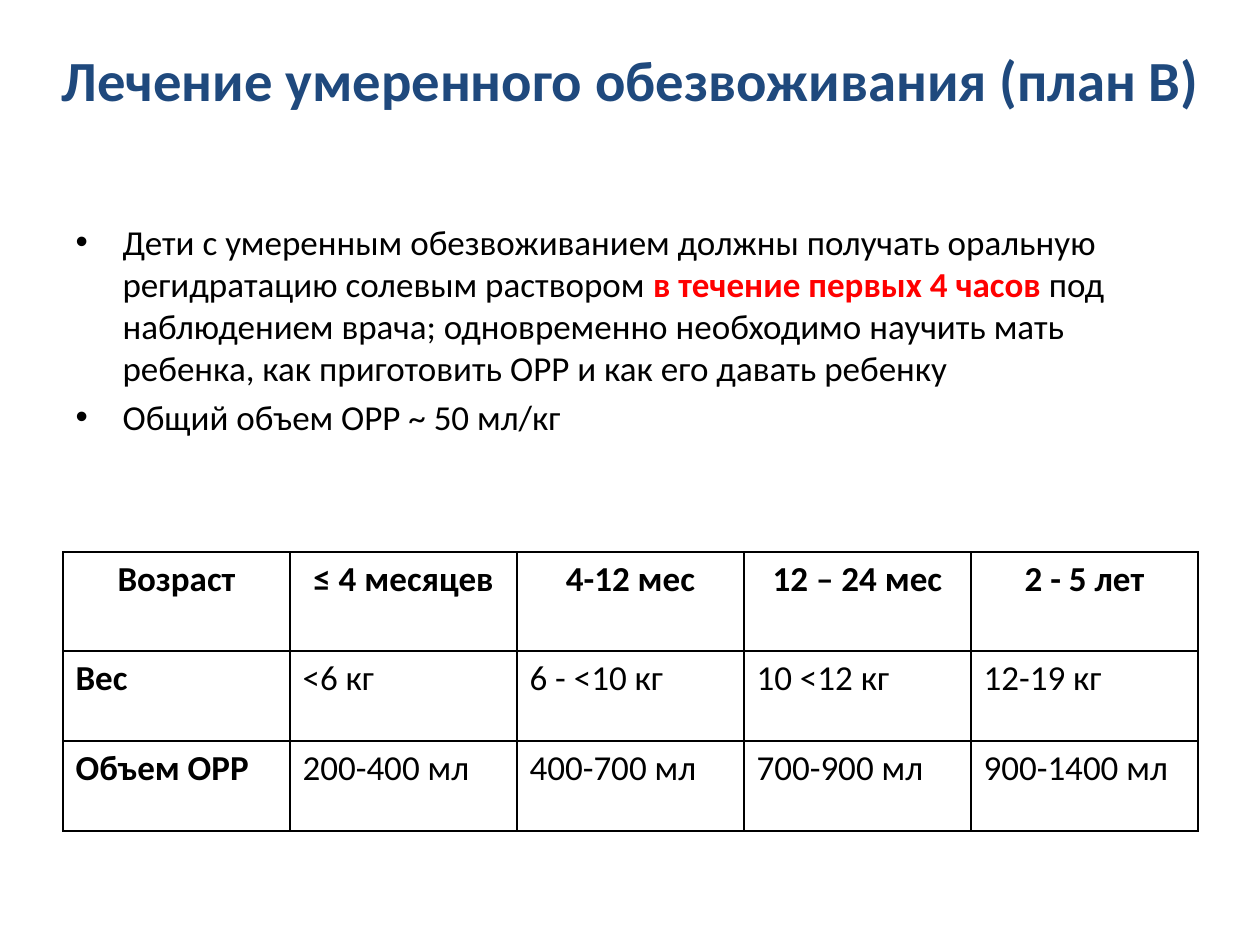
"""Build the slide on treating moderate dehydration (plan B)."""
from pptx import Presentation
from pptx.dml.color import RGBColor
from pptx.enum.text import MSO_ANCHOR as Anchor, MSO_AUTO_SIZE as AutoSize, PP_ALIGN as Align
from pptx.oxml import parse_xml
from pptx.oxml.ns import nsdecls
from pptx.util import Emu, Pt

PX_PER_INCH = 126
FONT = "Calibri"
BLACK = RGBColor(0x00, 0x00, 0x00)
NAVY = RGBColor(0x1F, 0x49, 0x7D)
RED = RGBColor(0xFF, 0x00, 0x00)

TITLE = "Лечение умеренного обезвоживания (план В)"
ADVICE = [
    [
        ("Дети с умеренным обезвоживанием должны получать оральную "
         "регидратацию солевым раствором ", False),
        ("в течение первых 4 часов", True),
        (" под наблюдением врача; одновременно необходимо научить мать "
         "ребенка, как приготовить ОРР и как его давать ребенку", False),
    ],
    [("Общий объем ОРР ~ 50 мл/кг", False)],
]
DOSES = [
    ["Возраст", "≤ 4 месяцев", "4-12 мес", "12 – 24 мес", "2 - 5 лет"],
    ["Вес", "<6 кг", "6 - <10 кг", "10 <12 кг", "12-19 кг"],
    ["Объем ОРР", "200-400 мл", "400-700 мл", "700-900 мл", "900-1400 мл"],
]
ROW_HEIGHTS = [99, 90, 90]
COLUMN_WIDTH = 227


def px(length):
    """Turn pixels into EMU."""
    return Emu(round(length * 914400 / PX_PER_INCH))


def place(shape, left, top, width, height):
    """Move and size a shape, in pixels."""
    shape.left, shape.top = px(left), px(top)
    shape.width, shape.height = px(width), px(height)


def style(run, size=20, color=BLACK, bold=False):
    """Format one run of text."""
    run.font.name = FONT
    run.font.size = Pt(size)
    run.font.bold = bold
    run.font.color.rgb = color


def hang(paragraph):
    """Give a paragraph a hanging indent."""
    properties = paragraph._p.get_or_add_pPr()
    properties.set("marL", str(px(47)))
    properties.set("indent", str(-px(47)))


def add_title(slide):
    """Fill the title placeholder."""
    title = slide.shapes.title
    place(title, 35, 0, 1191, 157)
    frame = title.text_frame
    frame.text = TITLE
    frame.auto_size = AutoSize.NONE
    frame.vertical_anchor = Anchor.MIDDLE
    heading = frame.paragraphs[0]
    heading.alignment = Align.CENTER
    style(heading.runs[0], 32.4, NAVY, True)


def add_advice(slide):
    """Fill the body placeholder with the bulleted advice."""
    body = slide.placeholders[1]
    place(body, 63, 214, 1134, 193)
    frame = body.text_frame
    frame.auto_size = AutoSize.NONE
    for index, parts in enumerate(ADVICE):
        paragraph = frame.add_paragraph() if index else frame.paragraphs[0]
        hang(paragraph)
        for text, urgent in parts:
            run = paragraph.add_run()
            run.text = text
            style(run, color=RED if urgent else BLACK, bold=urgent)


def outline(cell):
    """Draw a thin black border on all sides of a cell."""
    properties = cell._tc.get_or_add_tcPr()
    for position, side in enumerate("LRTB"):
        properties.insert(position, parse_xml(
            f'<a:ln{side} {nsdecls("a")} w="{Pt(1)}"><a:solidFill>'
            f'<a:srgbClr val="{BLACK}"/></a:solidFill></a:ln{side}>'))


def add_doses(slide):
    """Add the table of doses by age and weight."""
    doses = slide.shapes.add_table(
        len(DOSES), len(DOSES[0]), px(63), px(552),
        px(COLUMN_WIDTH * len(DOSES[0])), px(sum(ROW_HEIGHTS))).table
    doses.first_row = doses.horz_banding = False
    for row, height in zip(doses.rows, ROW_HEIGHTS):
        row.height = px(height)
    for row, values in enumerate(DOSES):
        for column, value in enumerate(values):
            cell = doses.cell(row, column)
            cell.fill.background()
            outline(cell)
            paragraph = cell.text_frame.paragraphs[0]
            paragraph.text = value
            paragraph.alignment = Align.LEFT if row else Align.CENTER
            hang(paragraph)
            style(paragraph.runs[0], bold=row == 0 or column == 0)


def main():
    """Build and save the slide."""
    deck = Presentation()
    deck.slide_width, deck.slide_height = px(1260), px(945)
    slide = deck.slides.add_slide(deck.slide_layouts[1])
    add_title(slide)
    add_doses(slide)
    add_advice(slide)
    deck.save("out.pptx")


if __name__ == "__main__":
    main()
